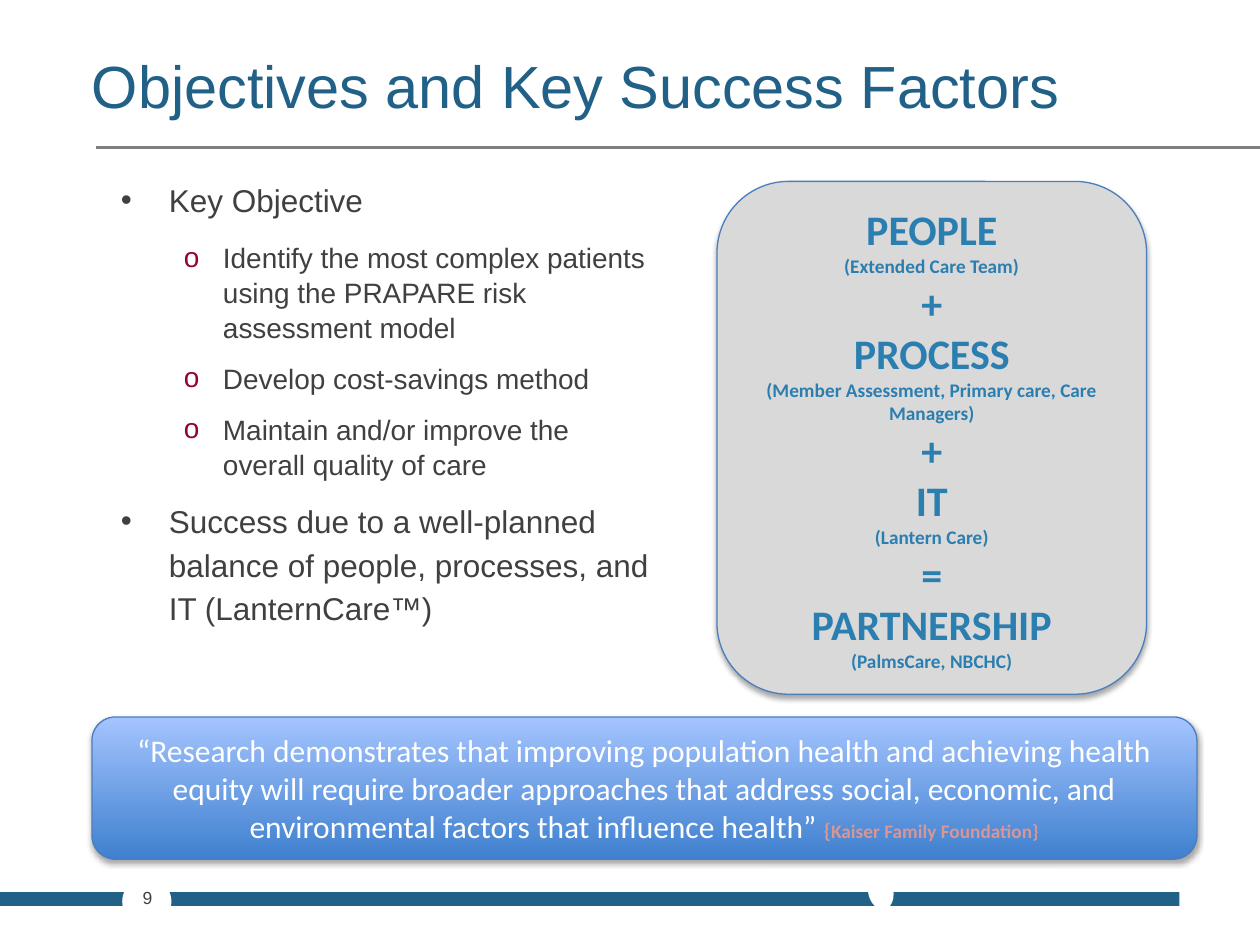
from collections import namedtuple

from lxml import etree
from pptx import Presentation
from pptx.dml.color import RGBColor
from pptx.enum.shapes import MSO_CONNECTOR, MSO_SHAPE
from pptx.enum.text import MSO_ANCHOR, MSO_AUTO_SIZE, PP_ALIGN
from pptx.oxml.ns import qn
from pptx.util import Inches, Pt

CENTER, LEFT = PP_ALIGN.CENTER, PP_ALIGN.LEFT
TOP, MIDDLE = MSO_ANCHOR.TOP, MSO_ANCHOR.MIDDLE
RECTANGLE, ROUNDED, OVAL = MSO_SHAPE.RECTANGLE, MSO_SHAPE.ROUNDED_RECTANGLE, MSO_SHAPE.OVAL
STRAIGHT, NO_FIT = MSO_CONNECTOR.STRAIGHT, MSO_AUTO_SIZE.NONE

COLORS = {
    "white": "FFFFFF", "navy": "216187", "text": "404040", "rule": "7F7F7F",
    "bullet": "98002E", "panel": "D9D9D9", "outline": "4B7EBC", "formula": "2B7EB0",
    "deep": "3F80CE", "light": "A4C4FF", "credit": "D99694", "shadow": "000000",
}
COLUMNS, ROWS = 100, 75
CELL = Inches(0.1)

Box = namedtuple("Box", "left top width height")

OBJECTIVES = [
    (0, "Key Objective"),
    (1, "Identify the most complex patients using the PRAPARE risk assessment model"),
    (1, "Develop cost-savings method"),
    (1, "Maintain and/or improve the overall quality of care"),
    (0, "Success due to a well-planned balance of people, processes, and IT (LanternCare™)"),
]
FORMULA = [
    (24, "PEOPLE"), (11, "(Extended Care Team)"), (24, "+"),
    (24, "PROCESS"), (11, "(Member Assessment, Primary care, Care Managers)"), (24, "+"),
    (24, "IT"), (11, "(Lantern Care)"), (24, "="),
    (24, "PARTNERSHIP"), (11, "(PalmsCare, NBCHC)"),
]
QUOTE = [
    (18, "white", False, "“Research demonstrates that improving population health and achieving "
     "health equity will require broader approaches that address social, economic, and "
     "environmental factors that influence health” "),
    (12, "credit", True, "{"),
    (11, "credit", True, "Kaiser Family Foundation}"),
]


def color(name):
    return RGBColor.from_string(COLORS[name])


def cells(box):
    return [round(value * CELL) for value in box]


def inside(box, left, top, width, height):
    return Box(box.left + left, box.top + top, width, height)


def style(font, size, name, face="Arial", bold=False):
    font.size, font.name, font.bold = Pt(size), face, bold
    font.color.rgb = color(name)


def place(shape, box):
    shape.left, shape.top, shape.width, shape.height = cells(box)


def add_plain(page, kind, box, fill, rotation=0):
    shape = page.shapes.add_shape(kind, *cells(box))
    shape.shadow.inherit = False
    shape.fill.solid()
    shape.fill.fore_color.rgb = color(fill)
    shape.line.fill.background()
    shape.rotation = rotation


def add_card(page, box):
    card = page.shapes.add_shape(ROUNDED, *cells(box))
    card.line.color.rgb = color("outline")
    card.line.width = Pt(0.75)
    card.shadow.inherit = False
    effects = card.element.spPr.find(qn("a:effectLst"))
    shadow = etree.SubElement(effects, qn("a:outerShdw"), blurRad=str(Pt(3.1)),
                              dist=str(Pt(1.8)), dir="5400000", rotWithShape="0")
    tint = etree.SubElement(shadow, qn("a:srgbClr"), val=COLORS["shadow"])
    etree.SubElement(tint, qn("a:alpha"), val="35000")
    card.text_frame.word_wrap = True
    card.text_frame.vertical_anchor = MIDDLE
    return card


def add_footer(page, box):
    add_plain(page, RECTANGLE, inside(box, 0, 1.5, 95, 1.1), "navy")
    add_plain(page, OVAL, inside(box, 68.9, 0, 2, 2.9), "white", -12.2)
    add_plain(page, RECTANGLE, inside(box, 93.6, 0, 1.6, 3.2), "white")
    add_plain(page, OVAL, inside(box, 9.7, 0.3, 3.9, 3.9), "white")
    number = page.shapes.add_textbox(*cells(inside(box, 9.8, 0.6, 3.8, 2.7)))
    number.text_frame.word_wrap = True
    para = number.text_frame.paragraphs[0]
    para.text = "9"
    para.alignment = CENTER
    style(para.runs[0].font, 10, "text")


def add_heading(page, box):
    rule_left, rule_top = box.left + 1.3, box.top + 8.7
    start_x, start_y, end_x = cells((rule_left, rule_top, COLUMNS))
    rule = page.shapes.add_connector(STRAIGHT, start_x, start_y, end_x, start_y)
    rule.line.color.rgb = color("rule")
    rule.line.width = Pt(2)
    etree.SubElement(rule.element.spPr, qn("a:effectLst"))
    title = page.shapes.title
    place(title, box)
    frame = title.text_frame
    frame.text = "Objectives and Key Success Factors"
    frame.auto_size = NO_FIT
    frame.vertical_anchor = MIDDLE
    frame.margin_bottom = Inches(0.14)
    para = frame.paragraphs[0]
    para.alignment = LEFT
    style(para.runs[0].font, 34, "navy")


def add_bullet(para, level):
    margin, hang, mark, tint = [(0.38, 0.38, "•", "text"), (0.81, 0.31, "o", "bullet")][level]
    properties = para._p.get_or_add_pPr()
    properties.set("marL", str(Inches(margin)))
    properties.set("indent", str(-Inches(hang)))
    bullet_color = etree.SubElement(properties, qn("a:buClr"))
    etree.SubElement(bullet_color, qn("a:srgbClr"), val=COLORS[tint])
    etree.SubElement(properties, qn("a:buFont"), typeface="Arial")
    etree.SubElement(properties, qn("a:buChar"), char=mark)


def add_objectives(page, box):
    body = page.placeholders[1]
    place(body, box)
    frame = body.text_frame
    frame.text = "\n".join(text for _, text in OBJECTIVES)
    frame.auto_size = NO_FIT
    frame.vertical_anchor = TOP
    for para, (level, _) in zip(frame.paragraphs, OBJECTIVES):
        size, spacing, after = [(18, 1.15, 12), (16, 1.04, 9)][level]
        add_bullet(para, level)
        para.level = level
        para.alignment = LEFT
        para.line_spacing = spacing
        para.space_before, para.space_after = Pt(0), Pt(after)
        style(para.runs[0].font, size, "text")


def add_quote(page, box):
    card = add_card(page, box)
    card.fill.gradient()
    card.fill.gradient_angle = 90
    for stop, name in zip(card.fill.gradient_stops, ("deep", "light")):
        stop.color.rgb = color(name)
    para = card.text_frame.paragraphs[0]
    para.alignment = CENTER
    for size, name, bold, text in QUOTE:
        span = para.add_run()
        span.text = text
        style(span.font, size, name, "Calibri", bold)


def add_formula(page, box):
    card = add_card(page, box)
    card.fill.solid()
    card.fill.fore_color.rgb = color("panel")
    card.text_frame.text = "\n".join(text for _, text in FORMULA)
    for para, (size, _) in zip(card.text_frame.paragraphs, FORMULA):
        para.alignment = CENTER
        style(para.runs[0].font, size, "formula", "Calibri", True)


def main():
    deck = Presentation()
    deck.slide_width, deck.slide_height = COLUMNS * CELL, ROWS * CELL
    page = deck.slides.add_slide(deck.slide_layouts[1])
    add_footer(page, Box(0, 69.3, COLUMNS, 5.7))
    add_heading(page, Box(6.3, 3, 88.7, 8.4))
    add_objectives(page, Box(8.6, 13.4, 44.2, 44.8))
    add_quote(page, Box(7.3, 56.9, 87.7, 11.3))
    add_formula(page, Box(56.9, 14.4, 34.1, 40.7))
    deck.save("out.pptx")


if __name__ == "__main__":
    main()
